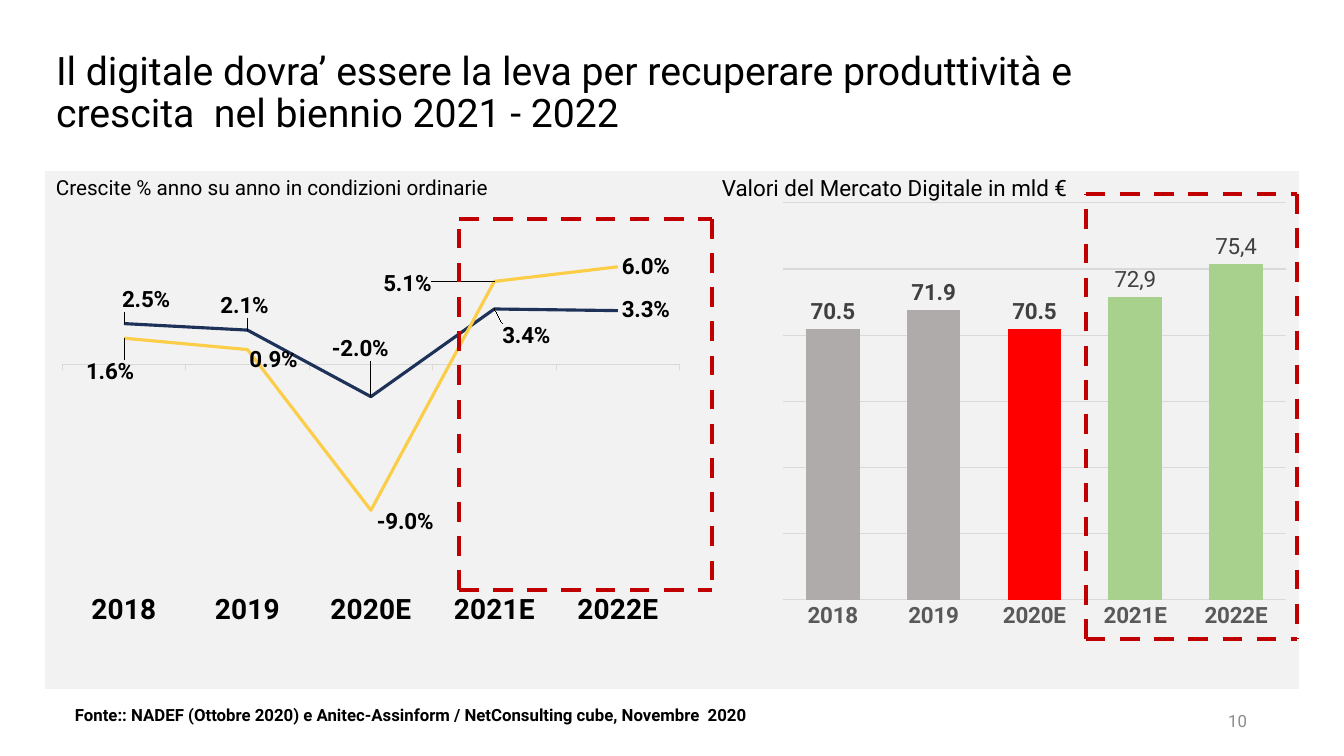
from lxml import etree
from pptx import Presentation
from pptx.chart.data import CategoryChartData
from pptx.dml.color import RGBColor
from pptx.enum.chart import XL_CHART_TYPE, XL_LABEL_POSITION, XL_TICK_LABEL_POSITION, XL_TICK_MARK
from pptx.enum.dml import MSO_LINE
from pptx.enum.shapes import MSO_CONNECTOR, MSO_SHAPE
from pptx.enum.text import MSO_ANCHOR, PP_ALIGN
from pptx.oxml import parse_xml
from pptx.oxml.ns import nsdecls, qn
from pptx.util import Emu, Pt

FONT = "Roboto"
COLORS = {
    "panel": "F2F2F2", "text": "000000", "page": "8C8C8C", "frame": "C00000",
    "grid": "D9D9D9", "years": "595959", "labels": "404040",
    "digital": "1E3159", "gdp": "FCCD47",
    "past": "AFABAB", "current": "FF0000", "forecast": "A9D18E",
}
YEARS = ["2018", "2019", "2020E", "2021E", "2022E"]
# Name, colour, values, label shifts in px from the place right of each point
GROWTH = [
    ("Mercato Digitale", "digital", [0.025, 0.021, -0.02, 0.034, 0.033],
     [(-6, -24), (-31, -24), (-43, -48), (4, 27)]),
    ("PIL", "gdp", [0.016, 0.009, -0.09, 0.051, 0.06],
     [(-42, 34), (-2, 11), (2, 12), (-115, 3)]),
]
MARKET = [70.5, 71.9, 70.5, 72.9, 75.4]
MARKET_COLORS = ["past", "past", "current", "forecast", "forecast"]
FORECAST_LABELS = {3: "72,9", 4: "75,4"}


def px(length):
    return Emu(round(length * 914400 / 100.8))


def place(box):
    return [px(length) for length in box]


def rgb(name):
    return RGBColor.from_string(COLORS[name])


def style_font(font, size, color="text", bold=False):
    font.name = FONT
    font.size = Pt(size)
    font.bold = bold
    font.color.rgb = rgb(color)


def add_title(slide, box, text):
    title = slide.shapes.title
    title.left, title.top, title.width, title.height = place(box)
    frame = title.text_frame
    frame.text = text
    frame.word_wrap = True
    frame.vertical_anchor = MSO_ANCHOR.MIDDLE
    paragraph = frame.paragraphs[0]
    paragraph.alignment = PP_ALIGN.LEFT
    paragraph.line_spacing = 0.9
    style_font(paragraph.runs[0].font, 28)


def add_text(slide, box, text, size, color="text", bold=False,
             align=PP_ALIGN.LEFT, anchor=MSO_ANCHOR.TOP):
    frame = slide.shapes.add_textbox(*place(box)).text_frame
    frame.text = text
    frame.word_wrap = True
    frame.vertical_anchor = anchor
    paragraph = frame.paragraphs[0]
    paragraph.alignment = align
    paragraph.line_spacing = 0.9
    style_font(paragraph.runs[0].font, size, color, bold)


def add_panel(slide, box):
    panel = slide.shapes.add_shape(MSO_SHAPE.RECTANGLE, *place(box))
    panel.shadow.inherit = False
    panel.fill.solid()
    panel.fill.fore_color.rgb = rgb("panel")
    panel.line.fill.background()


def manual_layout(**parts):
    layout = parse_xml(f"<c:layout {nsdecls('c')}><c:manualLayout/></c:layout>")
    for tag, value in parts.items():
        etree.SubElement(layout[0], qn(f"c:{tag}")).set("val", str(value))
    return layout


def add_plain_chart(slide, box, kind, data, plot_box):
    """Chart without title, legend or background, its plot at shares of the box."""
    chart = slide.shapes.add_chart(kind, *place(box), data).chart
    chart.has_title = False
    chart.has_legend = False
    style_font(chart.font, 10)
    chart.value_axis.visible = False
    chart.category_axis.format.line.color.rgb = rgb("grid")
    chart.category_axis.format.line.width = Pt(0.75)
    plot_area = chart._chartSpace.chart.plotArea
    for old in plot_area.findall(qn("c:layout")):
        plot_area.remove(old)
    x, y, w, h = plot_box
    plot_area.insert(0, manual_layout(layoutTarget="inner", xMode="edge", yMode="edge",
                                      x=x, y=y, w=w, h=h))
    chart._chartSpace.chart.addnext(
        parse_xml(f"<c:spPr {nsdecls('c', 'a')}><a:noFill/><a:ln><a:noFill/></a:ln></c:spPr>"))
    return chart


def add_growth_chart(slide, box):
    data = CategoryChartData(number_format="0.0%")
    data.categories = YEARS
    for name, _, values, _ in GROWTH:
        data.add_series(name, values)
    chart = add_plain_chart(slide, box, XL_CHART_TYPE.LINE, data, (0.03, 0.04, 0.96, 0.8))
    chart.value_axis.minimum_scale = -0.135
    chart.value_axis.maximum_scale = 0.07
    chart.value_axis.has_major_gridlines = False
    years = chart.category_axis
    years.tick_label_position = XL_TICK_LABEL_POSITION.LOW
    years.major_tick_mark = XL_TICK_MARK.OUTSIDE
    style_font(years.tick_labels.font, 20, bold=True)

    for series, (_, color, _, shifts) in zip(chart.plots[0].series, GROWTH):
        series.smooth = False
        series.format.line.color.rgb = rgb(color)
        series.format.line.width = Pt(2.25)
        labels = series.data_labels
        labels.show_value = True
        labels.number_format = "0.0%"
        labels.number_format_is_linked = False
        labels.position = XL_LABEL_POSITION.RIGHT
        style_font(labels.font, 16, bold=True)
        for index in range(len(shifts)):
            label = series.points[index].data_label
            style_font(label.font, 16, bold=True)
            label.position = XL_LABEL_POSITION.RIGHT
        for label, (dx, dy) in zip(labels._element.findall(qn("c:dLbl")), shifts):
            label.find(qn("c:idx")).addnext(
                manual_layout(x=dx / box[2], y=dy / box[3]))


def add_market_chart(slide, box):
    data = CategoryChartData(number_format="0.0")
    data.categories = YEARS
    data.add_series("Series 1", MARKET)
    chart = add_plain_chart(slide, box, XL_CHART_TYPE.COLUMN_CLUSTERED, data,
                            (0.02, 0.02, 0.96, 0.89))
    values = chart.value_axis
    values.minimum_scale, values.maximum_scale, values.major_unit = 50, 80, 5
    values.has_major_gridlines = True
    values.major_gridlines.format.line.color.rgb = rgb("grid")
    values.major_gridlines.format.line.width = Pt(0.75)
    chart.category_axis.major_tick_mark = XL_TICK_MARK.NONE
    style_font(chart.category_axis.tick_labels.font, 16, "years", True)

    plot = chart.plots[0]
    plot.vary_by_categories = False
    plot.gap_width, plot.overlap = 88, -27
    series = plot.series[0]
    labels = series.data_labels
    labels.show_value = True
    labels.position = XL_LABEL_POSITION.OUTSIDE_END
    style_font(labels.font, 16, "labels", True)
    for index, color in enumerate(MARKET_COLORS):
        fill = series.points[index].format.fill
        fill.solid()
        fill.fore_color.rgb = rgb(color)
    for index, text in FORECAST_LABELS.items():
        label = series.points[index].data_label
        label.text_frame.text = text
        style_font(label.text_frame.paragraphs[0].runs[0].font, 16, "labels")
        label.position = XL_LABEL_POSITION.OUTSIDE_END


def add_forecast_frame(slide, box):
    left, top, width, height = box
    right, bottom = left + width, top + height
    group = slide.shapes.add_group_shape()
    for ends in [(left, top, right, top), (left, bottom, right, bottom),
                 (right, top, right, bottom), (left, bottom, left, top)]:
        side = group.shapes.add_connector(MSO_CONNECTOR.STRAIGHT, *place(ends))
        side.line.color.rgb = rgb("frame")
        side.line.width = Pt(3.5)
        side.line.dash_style = MSO_LINE.DASH
        etree.SubElement(side._element.spPr, qn("a:effectLst"))


def main():
    prs = Presentation()
    prs.slide_width, prs.slide_height = px(1344), px(756)
    slide = prs.slides.add_slide(prs.slide_layouts[5])
    # Title and background panel
    add_panel(slide, (45, 171, 1254, 518))
    add_title(slide, (46, 21, 1070, 146),
              "Il digitale dovra’ essere la leva per recuperare produttività e "
              "crescita  nel biennio 2021 - 2022")
    # Growth rates
    add_text(slide, (46, 173, 477, 46), "Crescite % anno su anno in condizioni ordinarie", 14.8)
    add_growth_chart(slide, (43, 234, 643, 416))
    # Market values
    add_text(slide, (712, 172, 455, 46), "Valori del Mercato Digitale in mld €", 16)
    add_market_chart(slide, (772, 194, 525, 446))
    # Forecast years
    add_forecast_frame(slide, (459, 219, 253, 371))
    add_forecast_frame(slide, (1086, 194, 211, 445))
    # Source and page number
    add_text(slide, (65, 702, 708, 30),
             "Fonte:: NADEF (Ottobre 2020) e Anitec-Assinform / NetConsulting cube, "
             "Novembre  2020", 12, bold=True)
    add_text(slide, (955, 702, 302, 40), "10", 12, "page",
             align=PP_ALIGN.RIGHT, anchor=MSO_ANCHOR.MIDDLE)
    prs.save("out.pptx")


if __name__ == "__main__":
    main()
